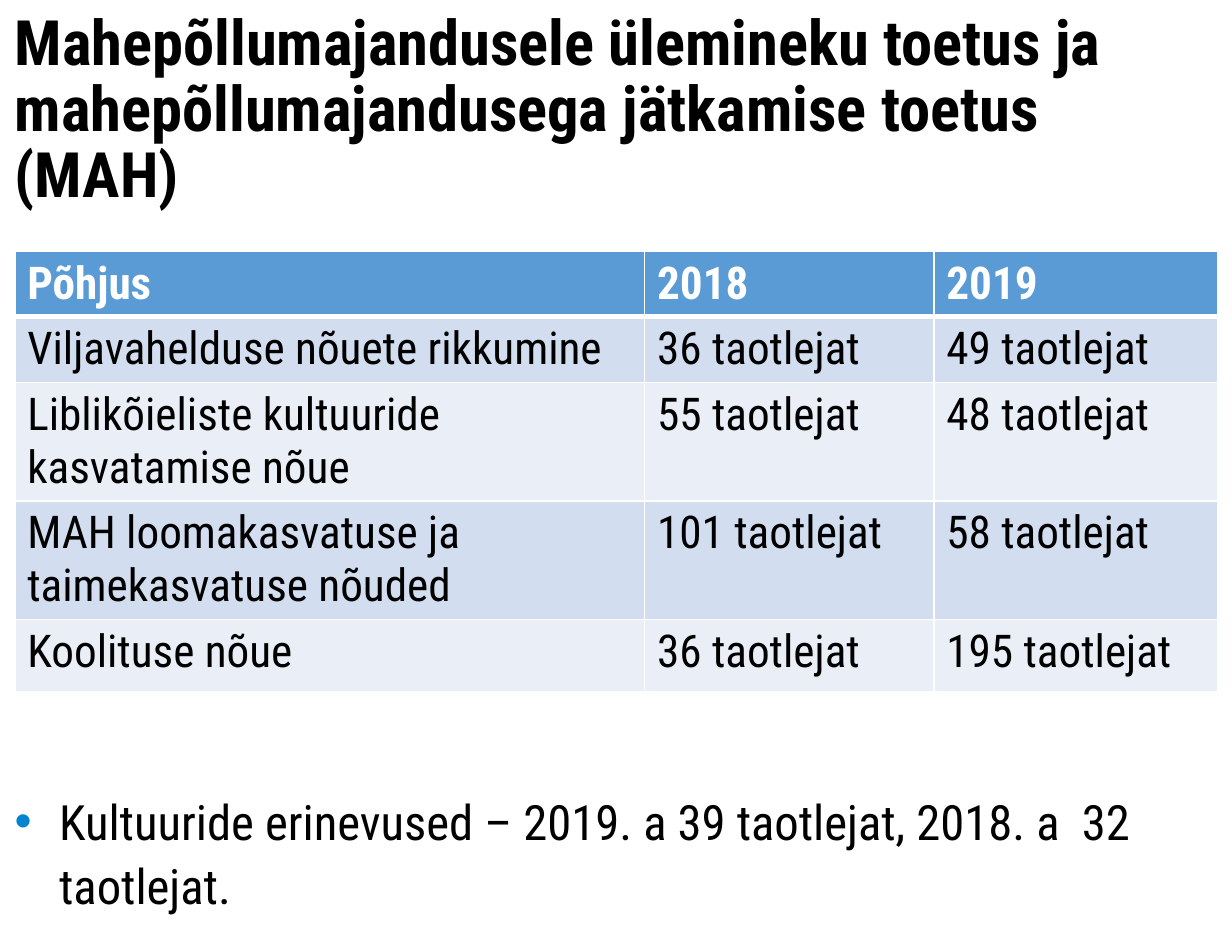
"""Build a slide on organic farming support with a table and a bullet."""
import pptx
import pptx.dml.color
import pptx.enum.text
import pptx.oxml
import pptx.oxml.ns
import pptx.util

Cm = pptx.util.Cm
Pt = pptx.util.Pt
RGBColor = pptx.dml.color.RGBColor

BLACK = RGBColor(0x00, 0x00, 0x00)
WHITE = RGBColor(0xFF, 0xFF, 0xFF)
BLUE = RGBColor(0x5B, 0x9B, 0xD5)
DOT = RGBColor(0x00, 0x84, 0xD1)
BANDS = [RGBColor(0xEA, 0xEF, 0xF7), RGBColor(0xD2, 0xDE, 0xEF)]
FONT = "Roboto Condensed"
NS = pptx.oxml.ns.nsdecls("a")

ROWS = [
    ("Põhjus", "2018", "2019"),
    ("Viljavahelduse nõuete rikkumine", "36 taotlejat", "49 taotlejat"),
    ("Liblikõieliste kultuuride kasvatamise nõue", "55 taotlejat", "48 taotlejat"),
    ("MAH loomakasvatuse ja taimekasvatuse nõuded", "101 taotlejat", "58 taotlejat"),
    ("Koolituse nõue", "36 taotlejat", "195 taotlejat"),
]
WIDTHS = [12.78, 5.87, 5.77]
HEIGHTS = [1.33, 1.33, 2.4, 2.4, 1.47]


class Deck:
    def __init__(self):
        self.show = pptx.Presentation()
        self.show.slide_width, self.show.slide_height = Cm(25), Cm(19)
        self.slide = self.show.slides.add_slide(self.show.slide_layouts[5])

    def apply(self, item, values):
        for name, value in values.items():
            setattr(item, name, value)

    def label(self, frame, text, size, color, bold=False, **style):
        para = frame.paragraphs[0]
        self.apply(para, {"alignment": pptx.enum.text.PP_ALIGN.LEFT, **style})
        run = para.add_run()
        run.text = text
        self.apply(run.font, {"name": FONT, "size": Pt(size), "bold": bold})
        run.font.color.rgb = color
        return para

    def place(self, shape, left, top, width, height, inset=0):
        self.apply(shape, {"left": Cm(left), "top": Cm(top),
                           "width": Cm(width), "height": Cm(height)})
        frame = shape.text_frame
        self.apply(frame, {
            "margin_left": 0, "margin_right": 0, "margin_bottom": 0,
            "margin_top": Cm(inset), "word_wrap": True,
            "auto_size": pptx.enum.text.MSO_AUTO_SIZE.NONE,
            "vertical_anchor": pptx.enum.text.MSO_ANCHOR.TOP,
        })
        return frame

    def title(self, text, *box):
        frame = self.place(self.slide.shapes.title, *box, inset=0.15)
        self.label(frame, text, 36, BLACK, True, line_spacing=0.88)

    def bullet(self, text, *box):
        shape = self.slide.shapes.add_textbox(0, 0, 0, 0)
        para = self.label(self.place(shape, *box), text, 28, BLACK,
                          line_spacing=1.1, space_after=Pt(8))
        props = para._p.get_or_add_pPr()
        props.set("marL", str(Cm(1.2)))
        props.set("indent", str(-Cm(0.9)))
        for part in (f'<a:buClr {NS}><a:srgbClr val="{DOT}"/></a:buClr>',
                     f'<a:buFont {NS} typeface="Arial"/>',
                     f'<a:buChar {NS} char="•"/>'):
            props.append(pptx.oxml.parse_xml(part))

    def edge(self, cell, row):
        props = cell._tc.get_or_add_tcPr()
        wide = {"T": 3 if row == 1 else 1, "B": 3 if row == 0 else 1}
        for spot, side in enumerate("LRTB"):
            props.insert(spot, pptx.oxml.parse_xml(
                f'<a:ln{side} {NS} w="{Pt(wide.get(side, 1))}"><a:solidFill>'
                f'<a:srgbClr val="{WHITE}"/></a:solidFill></a:ln{side}>'))

    def table(self, rows, left, top):
        grid = self.slide.shapes.add_table(
            len(rows), len(WIDTHS), Cm(left), Cm(top),
            Cm(sum(WIDTHS)), Cm(sum(HEIGHTS))).table
        for col, width in zip(grid.columns, WIDTHS):
            col.width = Cm(width)
        for r, texts in enumerate(rows):
            grid.rows[r].height = Cm(HEIGHTS[r])
            for c, text in enumerate(texts):
                cell = grid.cell(r, c)
                cell.fill.solid()
                cell.fill.fore_color.rgb = BANDS[r % 2] if r else BLUE
                self.edge(cell, r)
                self.label(cell.text_frame, text, 26, BLACK if r else WHITE, r == 0)


def main():
    deck = Deck()
    deck.title("Mahepõllumajandusele ülemineku toetus ja "
               "mahepõllumajandusega jätkamise toetus (MAH)", 0.3, 0.1, 24.4, 1.6)
    deck.bullet("Kultuuride erinevused – 2019. a 39 taotlejat, "
                "2018. a  32 taotlejat.", 0, 15.95, 25, 2.8)
    deck.table(ROWS, 0.3, 5.1)
    deck.show.save("out.pptx")


if __name__ == "__main__":
    main()
